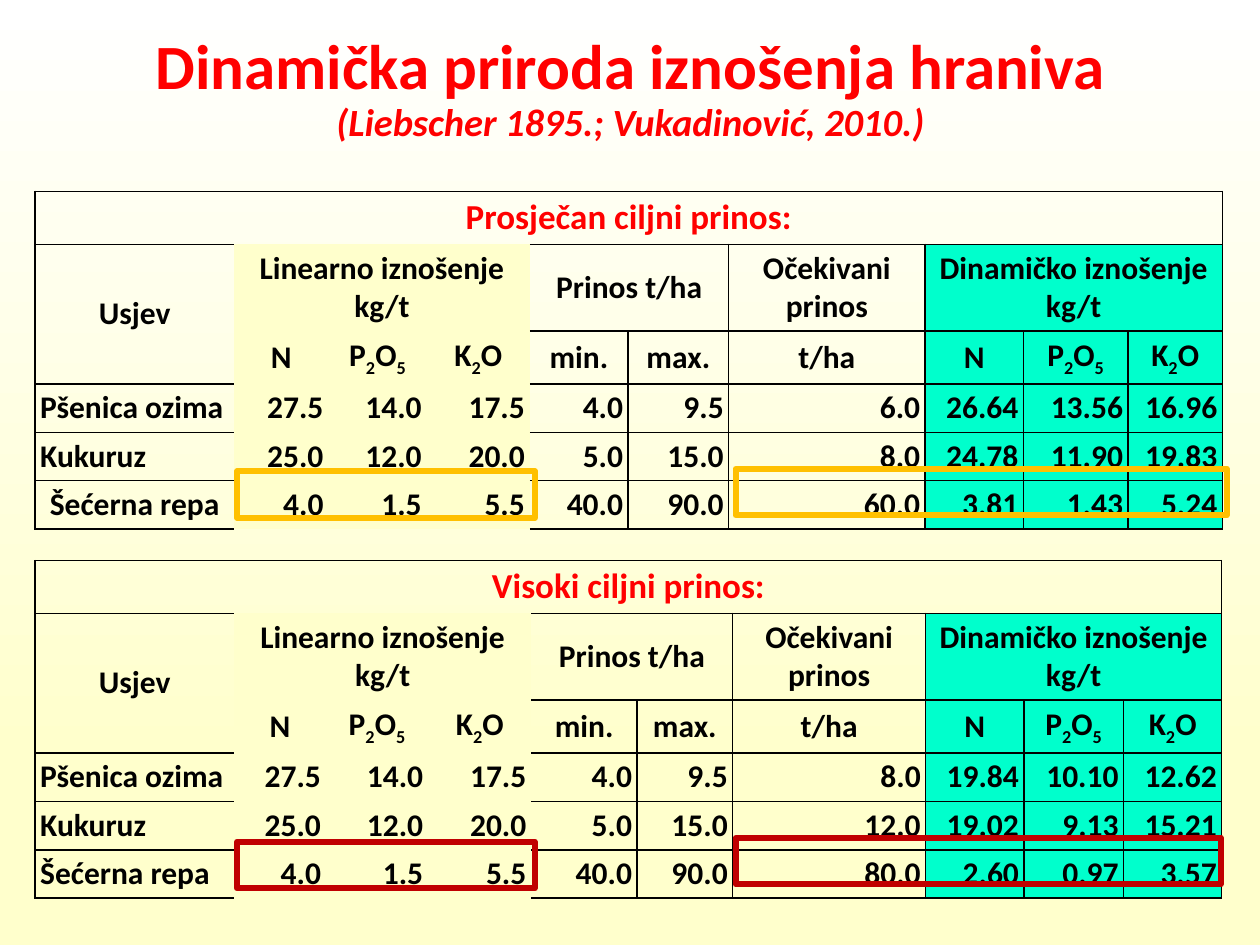
"""Slide with two tables of linear and dynamic nutrient removal by crops."""
from itertools import groupby

from lxml import etree
from pptx import Presentation
from pptx import util as u
from pptx.dml.color import RGBColor
from pptx.enum import shapes, text
from pptx.oxml.ns import qn

COLORS = {"red": "FF0000", "black": "000000", "white": "FFFFFF", "cream": "FFFFCC",
          "mint": "00FFCC", "amber": "FFC000", "crimson": "C00000"}
TITLE = [("Dinamička priroda iznošenja hraniva", 36, False),
         ("(Liebscher 1895.; Vukadinović, 2010.)", 22, True)]
GROUPS = {0: "Usjev", 1: "Linearno iznošenje\nkg/t", 4: "Prinos t/ha",
          6: "Očekivani prinos", 7: "Dinamičko iznošenje\nkg/t"}
NUTRIENTS = ["N", "P2O5", "K2O"]
UNITS = [""] + NUTRIENTS + ["min.", "max.", "t/ha"] + NUTRIENTS
CROPS = [["Pšenica ozima", "27.5", "14.0", "17.5", "4.0", "9.5"],
         ["Kukuruz", "25.0", "12.0", "20.0", "5.0", "15.0"],
         ["Šećerna repa", "4.0", "1.5", "5.5", "40.0", "90.0"]]
ROWS = [1.04, 1.55, 0.89, 0.97, 0.97, 0.97]
MERGES = [(0, 0, 0, 9), (1, 0, 2, 0), (1, 1, 1, 3), (1, 4, 1, 5), (1, 7, 1, 9)]
LEFT = 0.71
TABLES = [
    {"heading": "Prosječan ciljni prinos:", "top": 3.86, "centred": "Šećerna repa",
     "cols": [4.01, 1.9, 1.98, 2.08, 1.98, 2.03, 3.96, 1.98, 2.11, 1.9],
     "yields": [["6.0", "26.64", "13.56", "16.96"],
                ["8.0", "24.78", "11.90", "19.83"],
                ["60.0", "3.81", "1.43", "5.24"]],
     "frame": "amber", "boxes": [(14.83, 9.45, 9.9), (4.78, 9.5, 6)]},
    {"heading": "Visoki ciljni prinos:", "top": 11.3, "centred": None,
     "cols": [4.01, 1.85, 2.06, 2.08, 2.13, 1.93, 3.89, 1.98, 2.01, 1.98],
     "yields": [["8.0", "19.84", "10.10", "12.62"],
                ["12.0", "19.02", "9.13", "15.21"],
                ["80.0", "2.60", "0.97", "3.57"]],
     "frame": "crimson", "boxes": [(14.83, 16.89, 9.78), (4.78, 16.97, 6)]},
]
ALIGN = text.PP_ALIGN


def rgb(name):
    return RGBColor.from_string(COLORS[name])


def set_font(font, size, color):
    font.name, font.bold = "Calibri", True
    font.size = u.Pt(size)
    font.color.rgb = rgb(color)


def set_borders(cell, sides):
    tc_pr = cell._tc.get_or_add_tcPr()
    for side in "LRTB":
        ln = etree.SubElement(tc_pr, qn(f"a:ln{side}"), w=str(u.Pt(1)))
        if side in sides:
            fill = etree.SubElement(ln, qn("a:solidFill"))
            etree.SubElement(fill, qn("a:srgbClr"), val=COLORS["black"])
        else:
            etree.SubElement(ln, qn("a:noFill"))


def sides_of(row, col):
    if row == 0:
        return "LRTB"
    return {0: "LTB", 1: "", 2: "", 3: "", 4: "RTB"}.get(col, "LRTB")


def write(cell, content, align, size, color, formula):
    tf = cell.text_frame
    for i, line in enumerate(content.split("\n")):
        p = tf.add_paragraph() if i else tf.paragraphs[0]
        p.alignment = align
        set_font(p.font, size, color)
        for is_digit, part in groupby(line, str.isdigit) if formula else [(False, line)]:
            r = p.add_run()
            r.text = "".join(part)
            if is_digit:
                r._r.get_or_add_rPr().set("baseline", "-25000")


def style(cell, row, col):
    cell.vertical_anchor = text.MSO_ANCHOR.MIDDLE
    cell.margin_left = cell.margin_right = cell.margin_top = cell.margin_bottom = u.Cm(0.1)
    set_borders(cell, sides_of(row, col))
    if row and (1 <= col <= 3 or col >= 7):
        cell.fill.solid()
        cell.fill.fore_color.rgb = rgb("cream" if col <= 3 else "mint")
    else:
        cell.fill.background()


def add_yield_table(s, spec_):
    cols = spec_["cols"]
    grid = [[spec_["heading"]] + [""] * 9, [GROUPS.get(c, "") for c in range(10)], UNITS]
    grid += [crop + values for crop, values in zip(CROPS, spec_["yields"])]
    table = s.shapes.add_table(len(ROWS), len(cols), u.Cm(LEFT), u.Cm(spec_["top"]),
                               u.Cm(sum(cols)), u.Cm(sum(ROWS))).table
    table.first_row = table.horz_banding = False
    for column, width in zip(table.columns, cols):
        column.width = u.Cm(width)
    for row, height in zip(table.rows, ROWS):
        row.height = u.Cm(height)
    for r, line in enumerate(grid):
        for c, content in enumerate(line):
            cell = table.cell(r, c)
            style(cell, r, c)
            if not content:
                continue
            if r < 3 or content == spec_["centred"]:
                align = ALIGN.CENTER
            else:
                align = ALIGN.RIGHT if c else ALIGN.LEFT
            write(cell, content, align, 18 if r else 20, "black" if r else "red", r == 2)
    for top, left, bottom, right in MERGES:
        table.cell(top, left).merge(table.cell(bottom, right))


def add_frame(s, left, top, width, color):
    sp = s.shapes.add_shape(shapes.MSO_SHAPE.RECTANGLE, u.Cm(left), u.Cm(top),
                            u.Cm(width), u.Cm(0.94))
    sp.shadow.inherit = False
    sp.fill.background()
    sp.line.color.rgb = rgb(color)
    sp.line.width = u.Pt(3.5)


def add_title(s):
    sp = s.shapes.title
    sp.left, sp.top, sp.width, sp.height = map(u.Cm, (0.71, 0.56, 24, 2.49))
    tf = sp.text_frame
    tf.auto_size = text.MSO_AUTO_SIZE.NONE
    tf.vertical_anchor = text.MSO_ANCHOR.MIDDLE
    p = tf.paragraphs[0]
    p.alignment, p.line_spacing = ALIGN.CENTER, 0.9
    set_font(p.font, TITLE[0][1], "red")
    for i, (content, size, italic) in enumerate(TITLE):
        if i:
            p.add_line_break()
        r = p.add_run()
        r.text, r.font.size, r.font.italic = content, u.Pt(size), italic


def main():
    prs = Presentation()
    prs.slide_width, prs.slide_height = u.Cm(25.4), u.Cm(19.05)
    s = prs.slides.add_slide(prs.slide_layouts[5])
    fill = s.background.fill
    fill.gradient()
    fill.gradient_angle = 270
    for stop, (position, color) in zip(fill.gradient_stops, [(0, "white"), (0.8, "cream")]):
        stop.position, stop.color.rgb = position, rgb(color)
    add_title(s)
    for item in TABLES:
        add_yield_table(s, item)
    for item in TABLES:
        for left, top, width in item["boxes"]:
            add_frame(s, left, top, width, item["frame"])
    prs.save("out.pptx")


if __name__ == "__main__":
    main()
